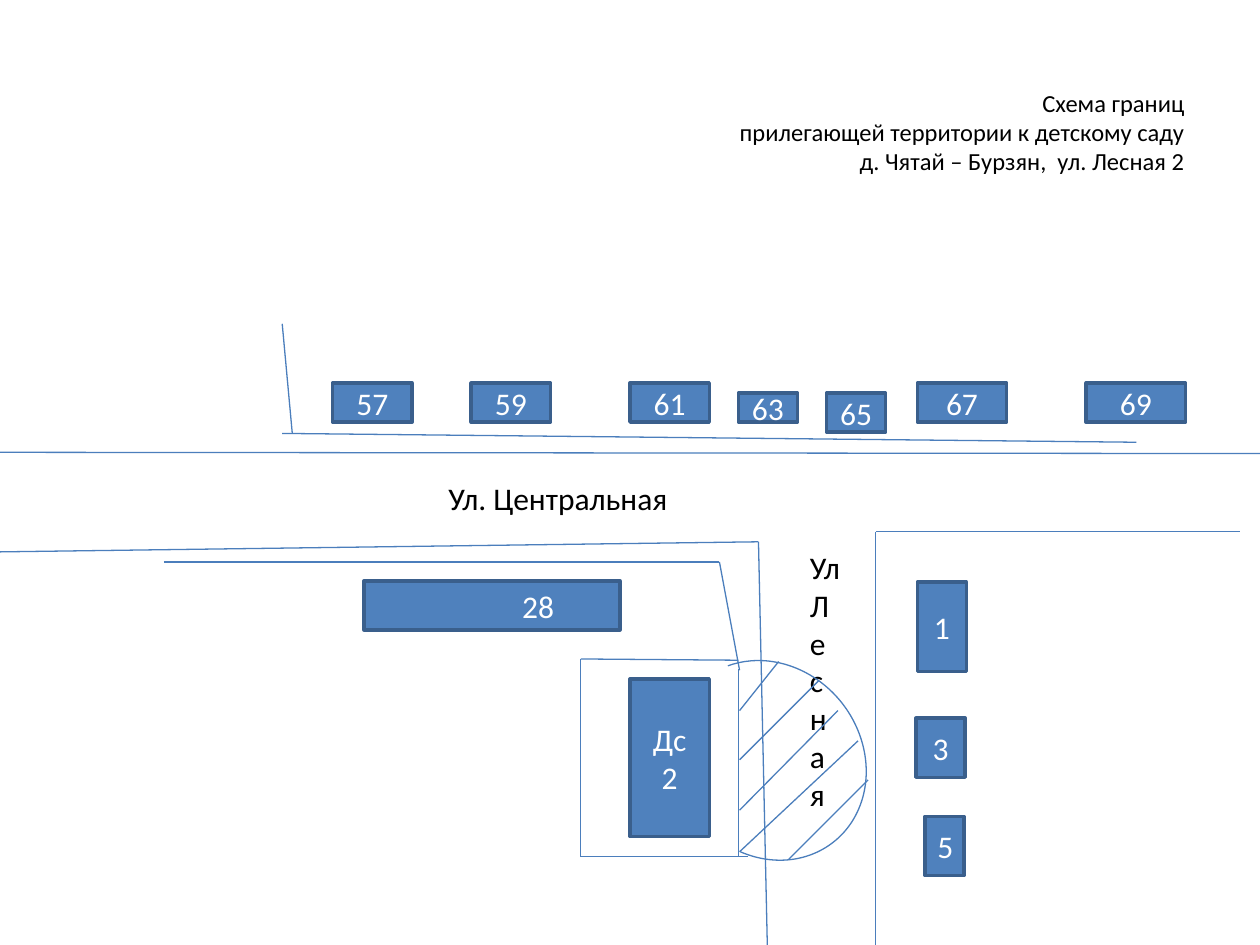
from pptx import Presentation
from pptx import util as u
from pptx.dml import color
from pptx.enum import shapes, text
from pptx.oxml import ns, xmlchemy

Inches = u.Inches
LINE, FILL, BORDER = "4B7EBC", "4F81BD", "3A5F8C"
BLACK, WHITE = "000000", "FFFFFF"


def set_color(target, value):
    """Give a font colour, a line colour or a fill's fore colour a hex value."""
    target.rgb = color.RGBColor.from_string(value)


def format_text(frame, content, size, value, align):
    """Write content into a text frame and format its runs."""
    frame.word_wrap = True
    frame.text = content
    for paragraph in frame.paragraphs:
        paragraph.alignment = align
        for run in paragraph.runs:
            run.font.name = "Calibri"
            run.font.size = u.Pt(size)
            set_color(run.font.color, value)


def add_label(slide, box, content, size=18, align=text.PP_ALIGN.LEFT):
    """Add a black text box and return its frame."""
    frame = slide.shapes.add_textbox(*map(Inches, box)).text_frame
    format_text(frame, content, size, BLACK, align)
    return frame


def add_line(slide, box, start, end):
    """Draw a thin line between two points measured from the box corner."""
    left, top = box[:2]
    line = slide.shapes.add_connector(
        shapes.MSO_CONNECTOR.STRAIGHT,
        Inches(left + start[0]), Inches(top + start[1]),
        Inches(left + end[0]), Inches(top + end[1]))
    set_color(line.line.color, LINE)
    line.line.width = u.Pt(0.75)
    line._element.spPr.append(xmlchemy.OxmlElement("a:effectLst"))


def add_path(slide, box, points):
    """Join consecutive points with lines."""
    for start, end in zip(points, points[1:]):
        add_line(slide, box, start, end)


def add_building(slide, box, place, name):
    """Add a named building at a place measured from the box corner."""
    left, top, width, height = place
    shape = slide.shapes.add_shape(
        shapes.MSO_SHAPE.RECTANGLE, Inches(box[0] + left), Inches(box[1] + top),
        Inches(width), Inches(height))
    shape.shadow.inherit = False
    shape.fill.solid()
    set_color(shape.fill.fore_color, FILL)
    set_color(shape.line.color, BORDER)
    shape.line.width = u.Pt(2)
    format_text(shape.text_frame, name, 18, WHITE, text.PP_ALIGN.CENTER)
    shape.text_frame.vertical_anchor = text.MSO_ANCHOR.MIDDLE
    return shape


def add_title(slide, box):
    """Place the right-aligned heading."""
    frame = add_label(
        slide, box,
        "Схема границ\vприлегающей территории к детскому саду\v"
        "д. Чятай – Бурзян,  ул. Лесная 2",
        14, text.PP_ALIGN.RIGHT)
    frame.vertical_anchor = text.MSO_ANCHOR.MIDDLE


def add_north_side(slide, box):
    """Place the houses and fence north of the main street."""
    add_line(slide, box, (0, 1.02), (box[2], 1.03))
    add_line(slide, box, (2.24, 0.87), (9.02, 0.94))
    add_line(slide, box, (2.32, 0.87), (2.24, 0))
    houses = [("57", 2.64, 0.47, 0.63, 0.31), ("59", 3.74, 0.47, 0.63, 0.31),
              ("61", 5, 0.47, 0.63, 0.31), ("63", 5.86, 0.55, 0.47, 0.23),
              ("65", 6.56, 0.55, 0.47, 0.31), ("67", 7.28, 0.47, 0.71, 0.31),
              ("69", 8.62, 0.47, 0.79, 0.31)]
    for name, *place in houses:
        add_building(slide, box, place, name)


def add_west_side(slide, box):
    """Place the road edge, fence and house on the south-west corner."""
    add_path(slide, box, [(0, 0.08), (6.02, 0), (6.09, box[3])])
    add_path(slide, box, [(1.3, 0.16), (5.71, 0.16), (5.87, 1.02)])
    house = add_building(slide, box, (2.89, 0.31, 2.03, 0.39), "28")
    house.text_frame.margin_left = Inches(0.83)


def add_east_side(slide, box):
    """Place the road edge and houses on the south-east corner."""
    add_path(slide, box, [(box[2], 0), (0, 0), (0, box[3])])
    houses = [("1", 0.33, 0.4, 0.39, 0.71), ("3", 0.32, 1.48, 0.39, 0.47),
              ("5", 0.39, 2.26, 0.31, 0.47)]
    for name, *place in houses:
        add_building(slide, box, place, name)


def add_kindergarten(slide, box):
    """Place the kindergarten, its plot and the hatched adjoining area."""
    left, top = box[:2]
    add_building(slide, box, (0.39, 0.16, 0.63, 1.25), "Дс\n2")
    add_path(slide, box, [(1.25, 0.01), (0, 0), (0, 1.57), (1.33, 1.57)])
    add_line(slide, box, (1.25, 0.08), (1.25, 1.57))
    arc = slide.shapes.add_shape(
        shapes.MSO_SHAPE.ARC, Inches(left + 0.67), Inches(top + 0.07),
        Inches(1.65), Inches(1.47))
    arc.rotation = 52.2
    arc.adjustments[0], arc.adjustments[1] = 116.51, 33.31
    arc.shadow.inherit = False
    arc.fill.background()
    set_color(arc.line.color, LINE)
    arc.line.width = u.Pt(0.75)
    hatching = [((1.57, 0.02), (1.26, 0.41)), ((1.89, 0.17), (1.26, 0.8)),
                ((2.04, 0.41), (1.26, 1.2)), ((2.2, 0.65), (1.26, 1.53)),
                ((2.28, 0.96), (1.65, 1.59))]
    for start, end in hatching:
        add_line(slide, box, start, end)


def main():
    """Build and save the street plan."""
    presentation = Presentation()
    presentation.slide_width = Inches(10)
    presentation.slide_height = Inches(7.5)
    slide = presentation.slides.add_slide(presentation.slide_layouts[6])
    add_title(slide, (0.5, 0.42, 9, 1.25))
    add_north_side(slide, (0, 2.57, 10, 1.03))
    add_west_side(slide, (0, 4.3, 6.09, 3.2))
    add_east_side(slide, (6.95, 4.22, 2.89, 3.28))
    add_label(slide, (3.46, 3.75, 4.2, 0.4), "Ул. Центральная")
    add_label(slide, (6.33, 4.3, 0.47, 2.22), "\n".join(["Ул", *"Лесная"]))
    add_kindergarten(slide, (4.61, 5.23, 2.28, 1.59))
    presentation.save("out.pptx")


if __name__ == "__main__":
    main()
